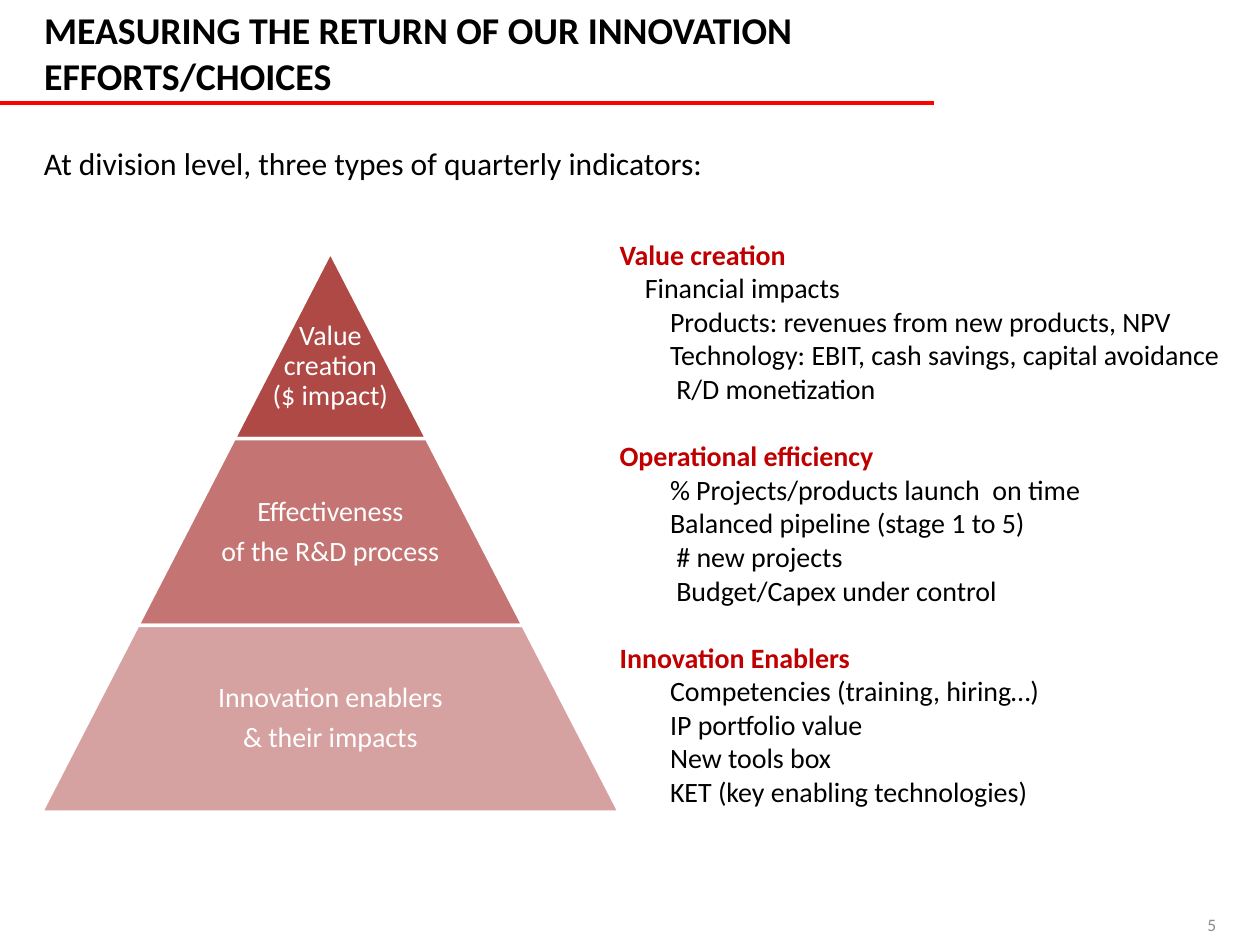
import pptx
import pptx.dml.color
import pptx.enum.shapes
import pptx.enum.text
import pptx.oxml
import pptx.oxml.ns
import pptx.util
from pptx.enum.text import MSO_ANCHOR, PP_ALIGN

Pt = pptx.util.Pt


def color(hex_value):
    return pptx.dml.color.RGBColor.from_string(hex_value)


class SlideBuilder:
    font_name = "Calibri"
    black, white, red, heading_red, grey = "000000", "FFFFFF", "FF0000", "C00000", "8C8C8C"

    def __init__(self, deck):
        self.slide = deck.slides.add_slide(deck.slide_layouts[5])

    def style(self, paragraph, size, hex_value, bold=False, align=PP_ALIGN.LEFT):
        paragraph.alignment = align
        font = paragraph.font
        font.name, font.size, font.bold = self.font_name, Pt(size), bold
        font.color.rgb = color(hex_value)

    def title(self, text, left, top, width, height):
        title = self.slide.shapes.title
        title.left, title.top, title.width, title.height = map(Pt, (left, top, width, height))
        frame = title.text_frame
        frame.text = text
        frame.auto_size = pptx.enum.text.MSO_AUTO_SIZE.NONE
        frame.vertical_anchor = MSO_ANCHOR.MIDDLE
        self.style(frame.paragraphs[0], 21.6, self.black, bold=True)

    def rule(self, left, right, y):
        line = self.slide.shapes.add_connector(
            pptx.enum.shapes.MSO_CONNECTOR.STRAIGHT, Pt(left), Pt(y), Pt(right), Pt(y))
        line.line.color.rgb = color(self.red)
        line.line.width = Pt(2.5)
        pptx.oxml.ns.qn("a:effectLst")
        line._element.spPr.append(pptx.oxml.parse_xml(
            f"<a:effectLst {pptx.oxml.ns.nsdecls('a')}/>"))

    def text_frame(self, left, top, width, height, wrap=True):
        box = self.slide.shapes.add_textbox(*map(Pt, (left, top, width, height)))
        box.text_frame.word_wrap = wrap
        return box.text_frame

    def intro(self, text, *place):
        frame = self.text_frame(*place, wrap=False)
        frame.text = text
        self.style(frame.paragraphs[0], 18, self.black)

    def indicators(self, sections, *place):
        frame = self.text_frame(*place)
        for index, (heading, items) in enumerate(sections):
            paragraph = frame.add_paragraph() if index else frame.paragraphs[0]
            paragraph.text = heading
            if index:
                paragraph.space_before = Pt(19.2)
            self.style(paragraph, 16, self.heading_red, bold=True)
            for indent, item in items:
                paragraph = frame.add_paragraph()
                paragraph.text = item
                properties = paragraph._p.get_or_add_pPr()
                properties.set("marL", str(Pt(indent)))
                properties.set("indent", "0")
                self.style(paragraph, 16, self.black)

    def tier(self, label, fill, left, top, width, height, slope, bottom_inset):
        shape = self.slide.shapes.add_shape(
            pptx.enum.shapes.MSO_SHAPE.TRAPEZOID, *map(Pt, (left, top, width, height)))
        shape.adjustments[0] = slope
        shape.shadow.inherit = False
        shape.fill.solid()
        shape.fill.fore_color.rgb = color(fill)
        shape.line.color.rgb = color(self.white)
        shape.line.width = Pt(2)
        frame = shape.text_frame
        frame.word_wrap = False
        frame.vertical_anchor = MSO_ANCHOR.MIDDLE
        frame.margin_left = frame.margin_right = frame.margin_top = 0
        frame.margin_bottom = Pt(bottom_inset)
        frame.text = label
        for paragraph in frame.paragraphs:
            paragraph.line_spacing = 0.9
            paragraph.space_after = Pt(5.6)
            self.style(paragraph, 16, self.white, align=PP_ALIGN.CENTER)

    def slide_number(self, number, *place):
        frame = self.text_frame(*place)
        frame.vertical_anchor = MSO_ANCHOR.MIDDLE
        paragraph = frame.paragraphs[0]
        paragraph.add_run().text = number
        self.style(paragraph, 10, self.grey, align=PP_ALIGN.RIGHT)


SUB, ITEM, DEEP = 14.4, 28.8, 32.4
SECTIONS = [
    ("Value creation", [
        (SUB, "Financial impacts"),
        (ITEM, "Products: revenues from new products, NPV"),
        (ITEM, "Technology: EBIT, cash savings, capital avoidance"),
        (DEEP, "R/D monetization")]),
    ("Operational efficiency", [
        (ITEM, "% Projects/products launch  on time"),
        (ITEM, "Balanced pipeline (stage 1 to 5)"),
        (DEEP, "# new projects"),
        (DEEP, "Budget/Capex under control")]),
    ("Innovation Enablers", [
        (ITEM, "Competencies (training, hiring…)"),
        (ITEM, "IP portfolio value"),
        (ITEM, "New tools box"),
        (ITEM, "KET (key enabling technologies)")]),
]
# Label, fill, and how far the label sits below the middle of its tier
TIERS = [
    ("Value\vcreation\v($ impact)", "AE4946", 12),
    ("Effectiveness\nof the R&D process", "C47472", 0),
    ("Innovation enablers\n& their impacts", "D6A2A1", 0),
]


def main():
    deck = pptx.Presentation()
    deck.slide_width, deck.slide_height = Pt(720), Pt(540)
    page = SlideBuilder(deck)

    # Heading
    page.rule(0, 534, 59)
    page.title("MEASURING THE RETURN OF OUR INNOVATION EFFORTS/CHOICES", 18, 0, 588, 60)
    page.intro("At division level, three types of quarterly indicators:", 18, 79, 395, 29)

    # Indicator list
    page.indicators(SECTIONS, 347, 132, 373, 356)

    # Pyramid: each tier is one top width wider than the tier above
    center, top, height, slope = 188.8, 144, 106.7, 0.516
    step = 2 * slope * height
    for level, (label, fill, drop) in enumerate(TIERS, start=1):
        width = level * step
        # A trapezoid's text area starts this far down; the bottom inset balances it
        text_top = height / 3 / level
        page.tier(label, fill, center - width / 2, top + (level - 1) * height,
                  width, height, slope, text_top - 2 * drop)

    # Footer
    page.slide_number("5", 534, 516, 168, 24)
    deck.save("out.pptx")


if __name__ == "__main__":
    main()
